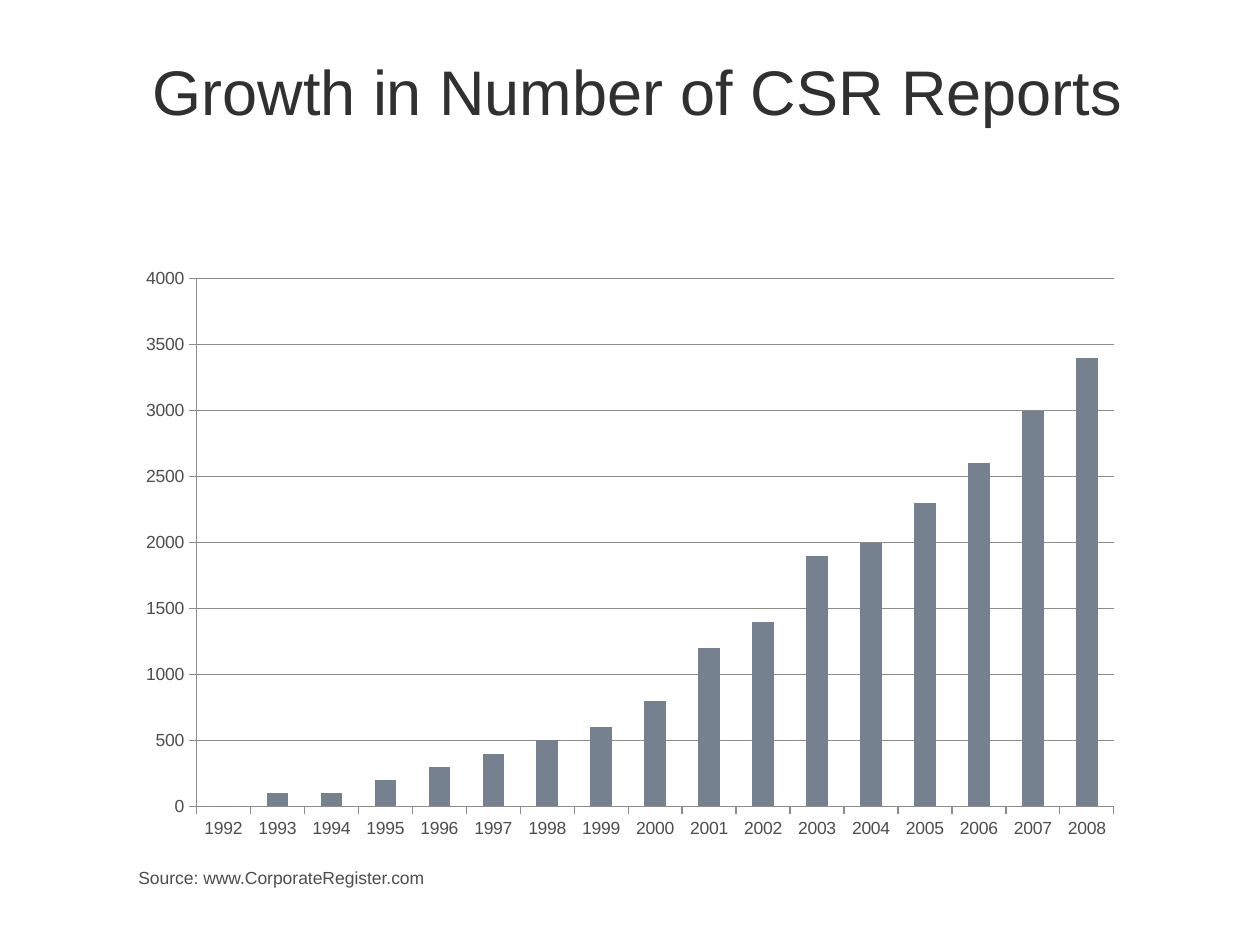
from pptx import Presentation
from pptx.chart import data
from pptx.dml import color
from pptx.enum import chart as charts, text
from pptx.util import Inches, Pt


def rgb(value):
    return color.RGBColor.from_string(value)


def style_font(font, size, value):
    font.name = "Arial"
    font.size = Pt(size)
    font.bold = False
    font.color.rgb = rgb(value)


presentation = Presentation()
presentation.slide_width = Inches(10)
presentation.slide_height = Inches(7.5)
slide = presentation.slides.add_slide(presentation.slide_layouts[5])
slide.background.fill.solid()
slide.background.fill.fore_color.rgb = rgb("FFFFFF")

title = slide.shapes.title
title.left, title.top = Inches(1.05), Inches(0.44)
title.width, title.height = Inches(8.02), Inches(0.56)
title.text_frame.text = "Growth in Number of CSR Reports"
title.text_frame.vertical_anchor = text.MSO_ANCHOR.MIDDLE
title.text_frame.auto_size = text.MSO_AUTO_SIZE.NONE
paragraph = title.text_frame.paragraphs[0]
paragraph.alignment = text.PP_ALIGN.CENTER
style_font(paragraph.font, 36, "303031")

reports = data.CategoryChartData()
reports.categories = [str(year) for year in range(1992, 2009)]
reports.add_series("Series 1", [0, 100, 100, 200, 300, 400, 500, 600, 800,
                                1200, 1400, 1900, 2000, 2300, 2600, 3000, 3400])
chart = slide.shapes.add_chart(
    charts.XL_CHART_TYPE.COLUMN_CLUSTERED,
    Inches(1), Inches(2.04), Inches(8), Inches(4.71), reports).chart
chart.has_legend = False
chart.has_title = False
style_font(chart.font, 10, "4D4D4D")

plot = chart.plots[0]
plot.gap_width = 150
plot.vary_by_categories = False
bars = plot.series[0].format.fill
bars.solid()
bars.fore_color.rgb = rgb("75818F")

value_axis = chart.value_axis
value_axis.minimum_scale = 0
value_axis.maximum_scale = 4000
value_axis.major_unit = 500
value_axis.has_major_gridlines = True
for axis in (chart.category_axis, value_axis):
    axis.major_tick_mark = charts.XL_TICK_MARK.OUTSIDE
    axis.minor_tick_mark = charts.XL_TICK_MARK.NONE
for line in (chart.category_axis.format.line, value_axis.format.line,
             value_axis.major_gridlines.format.line):
    line.color.rgb = rgb("8C8C8C")
    line.width = Pt(0.75)

source = slide.shapes.add_textbox(Inches(1), Inches(6.83), Inches(8), Inches(0.27))
source.text_frame.word_wrap = True
source.text_frame.auto_size = text.MSO_AUTO_SIZE.SHAPE_TO_FIT_TEXT
source.text_frame.text = "Source: www.CorporateRegister.com"
style_font(source.text_frame.paragraphs[0].font, 10, "4D4D4D")

presentation.save("out.pptx")
